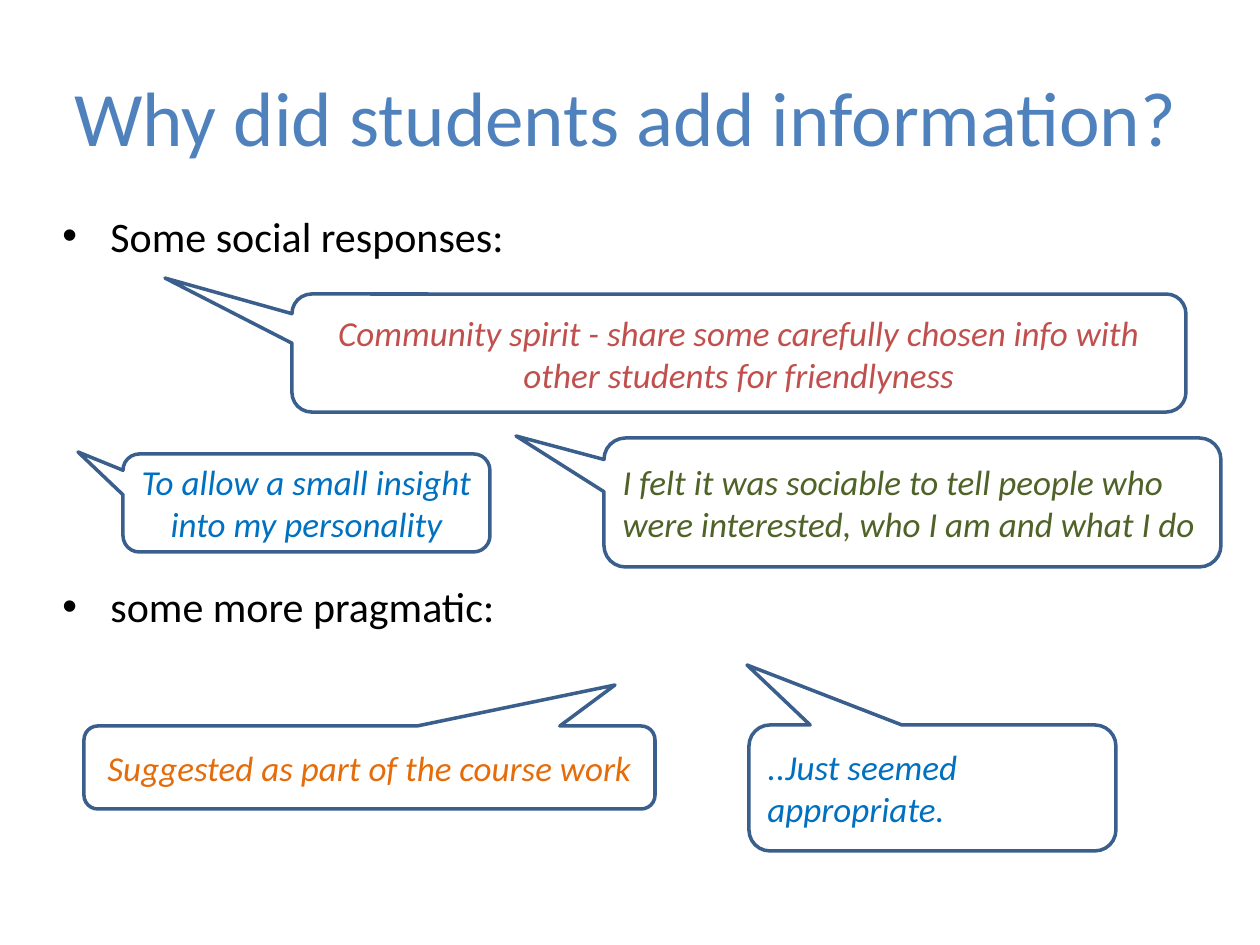
from lxml import etree
from pptx import Presentation
from pptx.dml.color import RGBColor
from pptx.enum.shapes import MSO_SHAPE
from pptx.enum.text import MSO_ANCHOR, PP_ALIGN
from pptx.oxml.ns import qn
from pptx.util import Emu, Pt

CALLOUT = MSO_SHAPE.ROUNDED_RECTANGULAR_CALLOUT
LEFT, CENTER = PP_ALIGN.LEFT, PP_ALIGN.CENTER
TOP, MIDDLE = MSO_ANCHOR.TOP, MSO_ANCHOR.MIDDLE
PX_PER_INCH = 126
FONT = "Calibri"
OUTLINE = "3A5F8C"

# text, box, tip of the tail, text colour, alignment
QUOTES = [
    ("Community spirit - share some carefully chosen info with other students "
     "for friendlyness", (292, 294, 894, 118), (165, 278), "C0504D", CENTER),
    ("To allow a small insight into my personality",
     (123, 454, 367, 98), (78, 452), "0070C0", CENTER),
    ("I felt it was sociable to tell people who were interested, who I am "
     "and what I do", (604, 438, 617, 129), (516, 436), "4F6228", LEFT),
    ("..Just seemed appropriate.",
     (749, 725, 367, 126), (747, 665), "0070C0", LEFT),
    ("Suggested as part of the course work",
     (84, 726, 571, 83), (615, 685), "E46C0A", CENTER),
]


def px(length):
    return Emu(round(length * 914400 / PX_PER_INCH))


def color(value):
    return RGBColor.from_string(value)


def write(para, text, align, tint, **font):
    para.text = text
    para.alignment = align
    para.font.color.rgb = color(tint)
    for name, value in {"name": FONT, **font}.items():
        setattr(para.font, name, value)


def text_frame(shape, anchor):
    frame = shape.text_frame
    frame.word_wrap = True
    frame.vertical_anchor = anchor
    return frame


def add_title(page, box, text):
    shape = page.shapes.add_textbox(*map(px, box))
    para = text_frame(shape, MIDDLE).paragraphs[0]
    write(para, text, CENTER, "4F81BD", size=Pt(44))


def add_bullets(page, box, lines, gap):
    """Stack bulleted lines, leaving a gap between them for the quotes."""
    frame = text_frame(page.shapes.add_textbox(*map(px, box)), TOP)
    for index, line in enumerate(lines):
        para = frame.add_paragraph() if index else frame.paragraphs[0]
        props = para._p.get_or_add_pPr()
        props.set("marL", str(px(48)))
        props.set("indent", str(px(-48)))
        if index:
            para.space_before = gap
        etree.SubElement(props, qn("a:buFont"), typeface="Arial")
        etree.SubElement(props, qn("a:buChar"), char="•")
        write(para, line, LEFT, "000000", size=Pt(24))


def add_quote(page, text, box, tip, tint, align):
    """Draw a speech bubble whose tail ends at the tip."""
    left, top, width, height = box
    bubble = page.shapes.add_shape(CALLOUT, *map(px, box))
    bubble.adjustments[0] = (tip[0] - left) / width - 0.5
    bubble.adjustments[1] = (tip[1] - top) / height - 0.5
    bubble.shadow.inherit = False
    bubble.fill.background()
    bubble.line.color.rgb = color(OUTLINE)
    bubble.line.width = Pt(2)
    para = text_frame(bubble, MIDDLE).paragraphs[0]
    write(para, text, align, tint, size=Pt(20), italic=True)


def main():
    deck = Presentation()
    deck.slide_width, deck.slide_height = px(1260), px(945)
    page = deck.slides.add_slide(deck.slide_layouts[6])
    add_title(page, (59, 37, 1134, 158), "Why did students add information?")
    add_bullets(page, (50, 204, 1065, 665),
                ["Some social responses:", "some more pragmatic:"], Pt(183))
    for quote in QUOTES:
        add_quote(page, *quote)
    deck.save("out.pptx")


if __name__ == "__main__":
    main()
